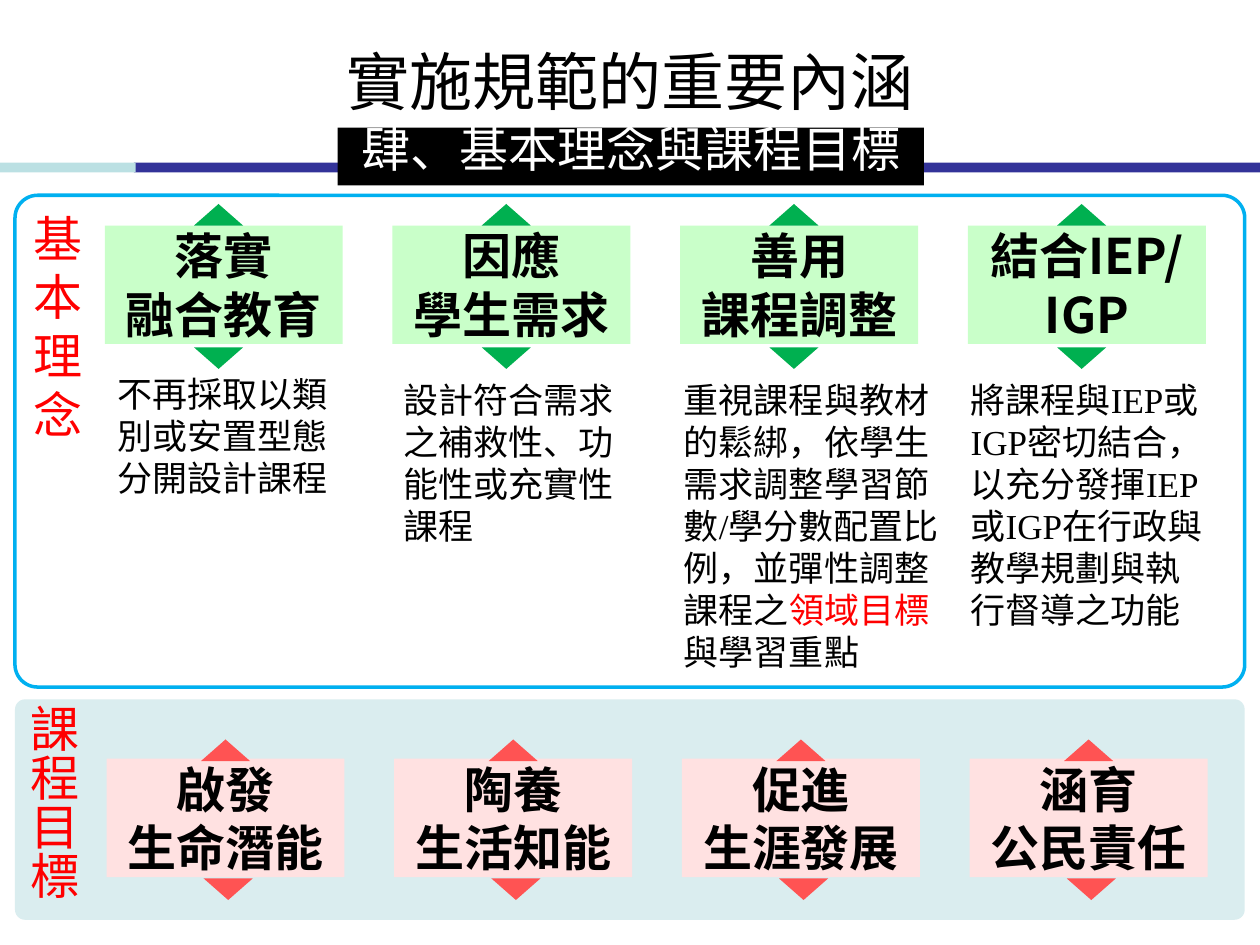
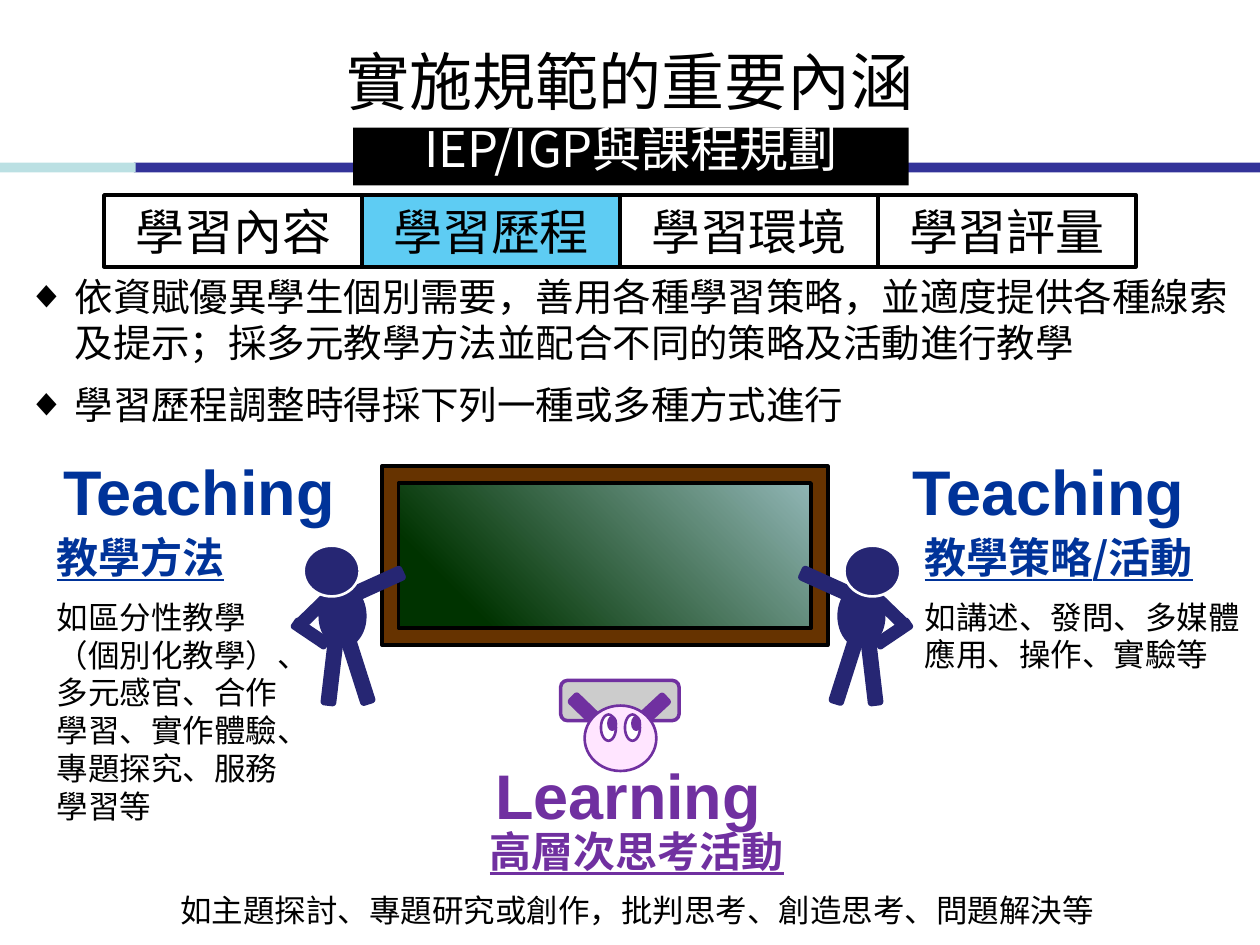
from collections import namedtuple

from lxml.etree import SubElement
from pptx import Presentation
from pptx.dml.color import RGBColor
from pptx.enum.shapes import MSO_SHAPE
from pptx.enum.text import MSO_ANCHOR, PP_ALIGN
from pptx.oxml import parse_xml
from pptx.oxml.ns import nsdecls, qn
from pptx.util import Pt

COLOURS = {
    "black": "000000", "white": "FFFFFF", "red": "FF0000",
    "rule": "333399", "rule start": "BBE0E3",
    "goal panel": "DAEDEF", "concept edge": "00B0F0",
    "concept card": "C9FFC9", "concept tip": "00B050",
    "goal card": "FFE1E1", "goal tip": "FF5353",
    "current tab": "5ECCF3", "teaching": "003399", "learning": "7030A0",
    "teacher": "262673", "frame": "663300", "desk": "CCCCCC", "face": "FFE5FF",
    "board dark": "003300", "board light": "9BBFC2", "board edge": "B8E3E6",
}
SANS, SANS_SC = "Noto Sans CJK TC", "Noto Sans CJK SC"
ARIAL, SERIF = "Arial", "Times New Roman"
WIDTH, HEIGHT = 720, 540
COLUMN_STEP = 164.4
CARD_WIDTH, CARD_HEIGHT = 136, 67.7

CardStyle = namedtuple("CardStyle", "fill tip above below")
CONCEPT = CardStyle("concept card", "concept tip", (51, -12.3), (51, 69.6))
GOAL = CardStyle("goal card", "goal tip", (54, -11), (55.5, 68.4))


def colour(name):
    """Return the named colour."""
    return RGBColor.from_string(COLOURS[name])


def add_box(owner, kind, place, fill=None, line=None, weight=2, turn=0):
    """Add a preset shape at (left, top, width, height)."""
    box = owner.shapes.add_shape(kind, *map(Pt, place))
    box.shadow.inherit = False
    box.rotation = turn
    if fill:
        box.fill.solid()
        box.fill.fore_color.rgb = colour(fill)
    else:
        box.fill.background()
    if line:
        box.line.color.rgb = colour(line)
        box.line.width = Pt(weight)
    else:
        box.line.fill.background()
    return box


def add_text_box(page, place, wrap=True):
    """Add an empty text box."""
    box = page.shapes.add_textbox(*map(Pt, place))
    box.text_frame.word_wrap = wrap
    return box


def add_para(box, align=PP_ALIGN.LEFT, before=None, spacing=None, anchor=MSO_ANCHOR.TOP):
    """Start the next paragraph of a box, using the empty first one if it is free."""
    frame = box.text_frame
    frame.vertical_anchor = anchor
    para = frame.paragraphs[0]
    if para.runs:
        para = frame.add_paragraph()
    para.alignment = align
    if before:
        para.space_before = Pt(before)
    if spacing:
        para.line_spacing = Pt(spacing)
    return para


def add_span(para, text, size, tint="black", name=SANS, bold=False, underline=False):
    """Add one run of text."""
    span = para.add_run()
    span.text = text
    font = span.font
    font.name, font.size = name, Pt(size)
    font.bold, font.underline = bold, underline
    font.color.rgb = colour(tint)
    east_asian = name if name in (SANS, SANS_SC) else SANS
    SubElement(font._element, qn("a:ea")).set("typeface", east_asian)


def add_bullet(para):
    """Give a paragraph a diamond bullet with a hanging indent."""
    properties = para._p.get_or_add_pPr()
    properties.set("marL", str(Pt(27)))
    properties.set("indent", str(-Pt(27)))
    SubElement(properties, qn("a:buFont")).set("typeface", ARIAL)
    SubElement(properties, qn("a:buChar")).set("char", "◆")


def add_header(page, subtitle, width):
    """Draw the title, the two-colour rule and the black subtitle band."""
    add_box(page, MSO_SHAPE.RECTANGLE, (76.5, 93, WIDTH - 76.5, 5.5), "rule")
    add_box(page, MSO_SHAPE.RECTANGLE, (0, 93, 77.5, 5.5), "rule start")
    title = add_text_box(page, (0, 21, WIDTH, 51))
    add_span(add_para(title, PP_ALIGN.CENTER), "實施規範的重要內涵", 36)
    band = add_box(page, MSO_SHAPE.RECTANGLE,
                   ((WIDTH - width) / 2 + 0.5, 73, width, 33), "black")
    add_span(add_para(band, PP_ALIGN.CENTER, spacing=25), subtitle, 28, "white")


def add_panel(page, place, label, spacing=None, fill=None, line=None):
    """Draw a rounded panel with a red label running down its left side."""
    panel = add_box(page, MSO_SHAPE.ROUNDED_RECTANGLE, place, fill, line)
    panel.adjustments[0] = 0.046
    para = add_para(panel, spacing=spacing)
    for index, letter in enumerate(label):
        if index:
            para.add_line_break()
        add_span(para, letter, 28, "red", ARIAL)


def add_card(page, left, top, lines, style):
    """Draw a heading card with a triangle above and below it."""
    card = add_box(page, MSO_SHAPE.RECTANGLE, (left, top, CARD_WIDTH, CARD_HEIGHT), style.fill)
    frame = card.text_frame
    frame.margin_left = frame.margin_right = frame.margin_top = frame.margin_bottom = 0
    for line in lines:
        add_span(add_para(card, PP_ALIGN.CENTER, anchor=MSO_ANCHOR.MIDDLE), line, 28, bold=True)
    for (across, down), turn in ((style.above, 0), (style.below, 180)):
        add_box(page, MSO_SHAPE.ISOSCELES_TRIANGLE,
                (left + across, top + down, 28, 12.3), style.tip, turn=turn)


def add_concepts(page, left, top):
    """Draw the panel of basic concepts, each with its explanation."""
    add_panel(page, (left, top, 702.7, 281), "基本理念", line="concept edge")
    concepts = [
        (("落實", "融合教育"), (0, 97.5, 136),
         [("不再採取以類別或安置型態分開設計課程", "black")]),
        (("因應", "學生需求"), (-1, 101, 142.5),
         [("設計符合需求之補救性、功能性或充實性課程", "black")]),
        (("善用", "課程調整"), (-5, 101, 166.5),
         [("重視課程與教材的鬆綁，依學生需求調整學習節數/學分數配置比例，並彈性調整課程之", "black"),
          ("領域目標", "red"), ("與學習重點", "black")]),
        (("結合IEP/IGP",), (-5.5, 101, 153.3),
         [("將課程與IEP或IGP密切結合，以充分發揮IEP或IGP在行政與教學規劃與執行督導之功能", "black")]),
    ]
    for index, (heading, (across, down, width), spans) in enumerate(concepts):
        column = left + 51.3 + index * COLUMN_STEP
        add_card(page, column, top + 17.3, heading, CONCEPT)
        para = add_para(add_text_box(page, (column + across, top + down, width, 177)))
        for text, tint in spans:
            add_span(para, text, 20, tint, SERIF)


def add_goals(page, left, top):
    """Draw the panel of curriculum goals."""
    add_panel(page, (left, top, 702.7, 126), "課程目標", 28, fill="goal panel")
    goals = ["啟發 生命潛能", "陶養 生活知能", "促進 生涯發展", "涵育 公民責任"]
    for index, goal in enumerate(goals):
        add_card(page, left + 52.3 + index * COLUMN_STEP, top + 34, goal.split(), GOAL)


def add_tabs(page, left, top, current):
    """Draw the row of four topic tabs with the current one filled."""
    for index, topic in enumerate(["學習內容", "學習歷程", "學習環境", "學習評量"]):
        tab = add_box(page, MSO_SHAPE.RECTANGLE, (left + index * 147.4, top, 147.4, 41),
                      "current tab" if topic == current else None, "black", 2.25)
        add_span(add_para(tab, PP_ALIGN.CENTER, anchor=MSO_ANCHOR.MIDDLE), topic, 28)


def add_points(page, place):
    """Write the two bulleted points."""
    box = add_box(page, MSO_SHAPE.RECTANGLE, place, "white")
    points = [
        ("依資賦優異學生個別需要，善用各種學習策略，並適度提供各種線索及提示；採多元教學方法並配合不同的策略及活動進行教學", SANS, None),
        ("學習歷程調整時得採下列一種或多種方式進行", SANS_SC, 9),
    ]
    for text, name, before in points:
        para = add_para(box, before=before)
        add_bullet(para)
        add_span(para, text, 22, name=name)


def add_method(page, place, heading, detail, tint, align=PP_ALIGN.LEFT):
    """Write an underlined heading with its examples below."""
    box = add_text_box(page, place)
    add_span(add_para(box, align), heading, 24, tint, bold=True, underline=True)
    add_span(add_para(box, align, before=9), detail, 18, name=ARIAL)


def add_word(page, place, word, tint):
    """Write a large English word."""
    box = add_text_box(page, place, wrap=False)
    add_span(add_para(box, PP_ALIGN.CENTER), word, 36, tint, ARIAL, bold=True)


def add_blackboard(page, place):
    """Draw the framed board, dark at its lower left corner."""
    group = page.shapes.add_group_shape()
    board = add_box(group, MSO_SHAPE.RECTANGLE, place)
    stops = "".join(
        f'<a:gs pos="{share * 1000}"><a:srgbClr val="{COLOURS[name]}"/></a:gs>'
        for share, name in ((20, "board dark"), (100, "board light"), (100, "board edge")))
    gradient = parse_xml(
        f'<a:gradFill {nsdecls("a")} rotWithShape="1"><a:gsLst>{stops}</a:gsLst>'
        '<a:path path="circle"><a:fillToRect l="0" t="100000" r="100000" b="0"/></a:path>'
        '</a:gradFill>')
    properties = board._element.spPr
    properties.replace(properties.find(qn("a:noFill")), gradient)
    frame = add_box(group, MSO_SHAPE.FRAME, place, "frame", "black")
    frame.adjustments[0] = 0.094


def add_teacher(page, left, top, mirrored=False):
    """Draw a teacher reaching to the left, or to the right when mirrored."""
    group = page.shapes.add_group_shape()
    limb, round_part = MSO_SHAPE.ROUNDED_RECTANGLE, MSO_SHAPE.OVAL
    parts = [
        (round_part, 23, 23, 25.5, 34.5, 0),
        (limb, 8, 68.4, 37.5, 7, 107.7),
        (limb, 23, 68.4, 37.5, 7, 83.3),
        (limb, 0, 19.5, 37, 7, 24.4),
        (limb, 43, 47.5, 22, 5.5, 326),
        (limb, 41, 34.5, 22, 5.5, 224.1),
    ]
    head = (round_part, 26, 0, 32, 29, 0)
    for part in parts + [head]:
        kind, across, down, width, height, turn = part
        if mirrored:
            across, turn = 65.5 - across - width, (360 - turn) % 360
        line, weight = ("white", 1.5) if part is head else ("teacher", 2)
        add_box(group, kind, (left + across, top + down, width, height),
                "teacher", line, weight, turn)


def add_learner(page, left, top):
    """Draw a learner at a desk."""
    group = page.shapes.add_group_shape()
    limb, round_part = MSO_SHAPE.ROUNDED_RECTANGLE, MSO_SHAPE.OVAL
    parts = [
        (limb, 0, 0, 67.7, 23, "desk", 2, 0),
        (limb, 40.3, 14.5, 23, 6.5, "learning", 2, 317.1),
        (limb, 3.6, 14.5, 23, 6.5, "learning", 2, 224.1),
        (round_part, 13.7, 14.4, 41, 37.4, "face", 1.5, 0),
    ]
    for eye in (23, 36.7):
        parts += [(round_part, eye, 19.5, 8.6, 15, "white", 1.5, 0),
                  (round_part, eye + 4.3, 21, 4.3, 7.2, "learning", 1.5, 0)]
    for kind, across, down, width, height, fill, weight, turn in parts:
        add_box(group, kind, (left + across, top + down, width, height),
                fill, "learning", weight, turn)


def build_concepts_page(page):
    """Build the page on concepts and goals."""
    add_header(page, "肆、基本理念與課程目標", 335)
    add_concepts(page, 8.6, 111.6)
    add_goals(page, 8.6, 399.6)


def build_planning_page(page):
    """Build the page on planning the learning process."""
    add_points(page, (8.6, 152.6, 705.6, 172.8))
    add_header(page, "IEP/IGP與課程規劃", 317.5)
    add_tabs(page, 59.5, 111.5, "學習歷程")
    add_method(page, (25.2, 300.2, 147.6, 176), "教學方法",
               "如區分性教學（個別化教學）、多元感官、合作學習、實作體驗、專題探究、服務學習等", "teaching")
    add_method(page, (521.3, 300.2, 198.5, 89), "教學策略/活動",
               "如講述、發問、多媒體應用、操作、實驗等", "teaching")
    add_method(page, (76.3, 468, 575.3, 72), "高層次思考活動",
               "如主題探討、專題研究或創作，批判思考、創造思考、問題解決等", "learning", PP_ALIGN.CENTER)
    add_word(page, (28, 255, 171.4, 51), "Teaching", "teaching")
    add_word(page, (513.4, 255, 171.4, 51), "Teaching", "teaching")
    add_word(page, (275, 429, 167.8, 51), "Learning", "learning")
    add_blackboard(page, (218.2, 266.4, 254.9, 102.2))
    add_teacher(page, 166, 311.8, mirrored=True)
    add_teacher(page, 456.5, 311.8)
    add_learner(page, 320.4, 388.8)


def main():
    """Build and save the deck."""
    deck = Presentation()
    deck.slide_width, deck.slide_height = Pt(WIDTH), Pt(HEIGHT)
    for build in (build_concepts_page, build_planning_page):
        build(deck.slides.add_slide(deck.slide_layouts[6]))
    deck.save("out.pptx")


if __name__ == "__main__":
    main()
